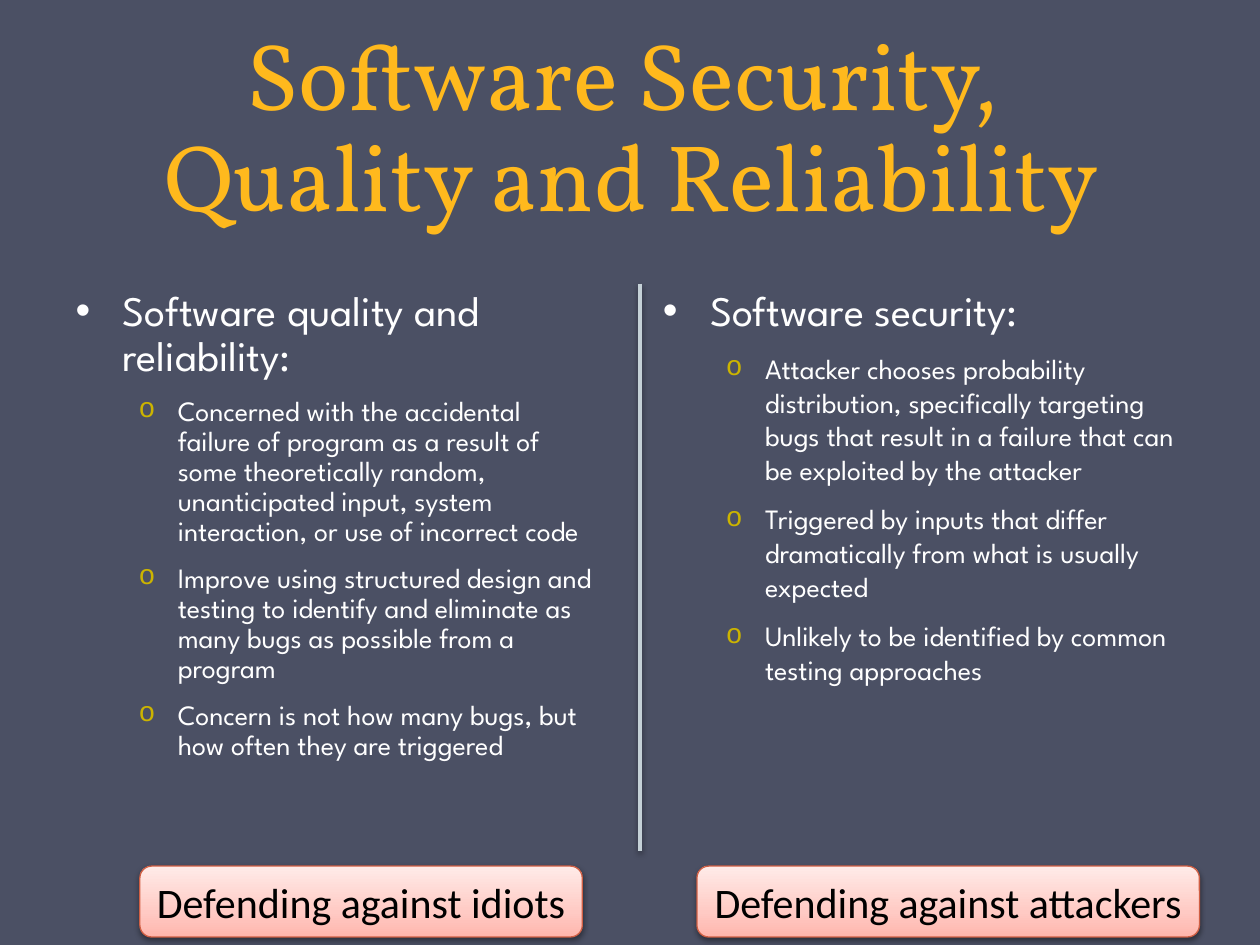
from lxml.etree import SubElement
from pptx import Presentation
from pptx.dml.color import RGBColor
from pptx.enum.shapes import MSO_CONNECTOR, MSO_SHAPE
from pptx.enum.text import MSO_ANCHOR, MSO_AUTO_SIZE, PP_ALIGN
from pptx.oxml import parse_xml
from pptx.oxml.ns import nsdecls, qn
from pptx.util import Cm, Pt

COLORS = {
    "background": "4B5064",
    "title": "FFB91D",
    "text": "FFFFFF",
    "bullet": "CCB400",
    "divider": "C5D1D7",
    "label_line": "D05F44",
    "label_text": "000000",
    "shadow": "000000",
}
LABEL_STOPS = [(0, "FFB5AC"), (35, "FFCAC4"), (100, "FFEBE8")]
TITLE_LINES = ["Software Security, ", "Quality and Reliability"]
QUALITY = [
    "Concerned with the accidental failure of program as a result of some theoretically "
    "random, unanticipated input, system interaction, or use of incorrect code",
    "Improve using structured design and testing to identify and eliminate as many bugs "
    "as possible from a program",
    "Concern is not how many bugs, but how often they are triggered",
]
SECURITY = [
    "Attacker chooses probability distribution, specifically targeting bugs that result "
    "in a failure that can be exploited by the attacker",
    "Triggered by inputs that differ dramatically from what is usually expected",
    "Unlikely to be identified by common testing approaches",
]


def color(name):
    return RGBColor.from_string(COLORS[name])


def place(shape, left, top, width, height):
    shape.left, shape.top = Cm(left), Cm(top)
    shape.width, shape.height = Cm(width), Cm(height)


def add_span(para, text, font, size, color_name):
    span = para.add_run()
    span.text = text
    span.font.name = font
    span.font.size = Pt(size)
    span.font.color.rgb = color(color_name)


def add_shadow(shape):
    shape._element.spPr.append(parse_xml(
        f'<a:effectLst {nsdecls("a")}>'
        '<a:outerShdw blurRad="40000" dist="20000" dir="5400000" rotWithShape="0">'
        f'<a:srgbClr val="{COLORS["shadow"]}"><a:alpha val="38000"/></a:srgbClr>'
        '</a:outerShdw></a:effectLst>'))


def fill_title(title):
    place(title, 0.03, 0.33, 25.4, 4.45)
    frame = title.text_frame
    frame.auto_size = MSO_AUTO_SIZE.NONE
    frame.vertical_anchor = MSO_ANCHOR.BOTTOM
    para = frame.paragraphs[0]
    para.alignment = PP_ALIGN.CENTER
    para.line_spacing = Pt(58)
    for number, line in enumerate(TITLE_LINES):
        if number:
            para.add_line_break()
        add_span(para, line, "Vollkorn", 54, "title")


def format_item(para, spacing, margin, hanging):
    para.line_spacing = spacing
    para.space_before = Pt(0)
    para.space_after = Pt(6)
    properties = para._p.get_or_add_pPr()
    before = properties.find(qn("a:spcBef"))
    before.clear()
    SubElement(before, qn("a:spcPct"), val="20000")
    properties.set("marL", str(Cm(margin)))
    properties.set("indent", str(-Cm(hanging)))
    return properties


def add_bullet(properties, character, font, color_name):
    bullet_color = SubElement(properties, qn("a:buClr"))
    SubElement(bullet_color, qn("a:srgbClr"), val=COLORS[color_name])
    SubElement(properties, qn("a:buFont"), typeface=font)
    SubElement(properties, qn("a:buChar"), char=character)


def fill_column(body, left, height, heading, points, point_spacing):
    place(body, left, 5.72, 10.92, height)
    frame = body.text_frame
    frame.auto_size = MSO_AUTO_SIZE.NONE
    para = frame.paragraphs[0]
    add_bullet(format_item(para, 0.9, 0.95, 0.95), "•", "Arial", "text")
    add_span(para, heading, "League Spartan", 24, "text")
    for point in points:
        para = frame.add_paragraph()
        para.level = 1
        add_bullet(format_item(para, point_spacing, 2.06, 0.79), "o", "Courier New", "bullet")
        add_span(para, point, "League Spartan", 16, "text")


def add_divider(slide):
    divider = slide.shapes.add_connector(
        MSO_CONNECTOR.STRAIGHT, Cm(12.91), Cm(5.72), Cm(12.91), Cm(17.15))
    divider.line.color.rgb = color("divider")
    divider.line.width = Pt(2.25)
    add_shadow(divider)


def add_label(slide, left, width, text):
    label = slide.shapes.add_shape(
        MSO_SHAPE.ROUNDED_RECTANGLE, Cm(left), Cm(17.46), Cm(width), Cm(1.43))
    stops = "".join(
        f'<a:gs pos="{position * 1000}"><a:srgbClr val="{value}"/></a:gs>'
        for position, value in LABEL_STOPS)
    label._element.spPr.append(parse_xml(
        f'<a:gradFill {nsdecls("a")} rotWithShape="1"><a:gsLst>{stops}</a:gsLst>'
        '<a:lin ang="16200000" scaled="0"/></a:gradFill>'))
    label.line.color.rgb = color("label_line")
    label.line.width = Pt(0.75)
    add_shadow(label)
    frame = label.text_frame
    frame.word_wrap = False
    frame.auto_size = MSO_AUTO_SIZE.SHAPE_TO_FIT_TEXT
    para = frame.paragraphs[0]
    para.alignment = PP_ALIGN.CENTER
    add_span(para, text, "Calibri", 24, "label_text")


def main():
    deck = Presentation()
    deck.slide_width, deck.slide_height = Cm(25.4), Cm(19.05)
    slide = deck.slides.add_slide(deck.slide_layouts.get_by_name("Two Content"))
    slide.background.fill.solid()
    slide.background.fill.fore_color.rgb = color("background")
    title, quality, security, *extras = slide.placeholders
    for extra in extras:
        extra._element.getparent().remove(extra._element)
    fill_title(title)
    fill_column(quality, 1.27, 12.07, "Software quality and reliability:", QUALITY, 0.9)
    fill_column(security, 13.11, 12.6, "Software security:", SECURITY, 1.0)
    add_divider(slide)
    add_label(slide, 2.82, 8.92, "Defending against idiots")
    add_label(slide, 14.05, 10.13, "Defending against attackers")
    deck.save("out.pptx")


if __name__ == "__main__":
    main()
